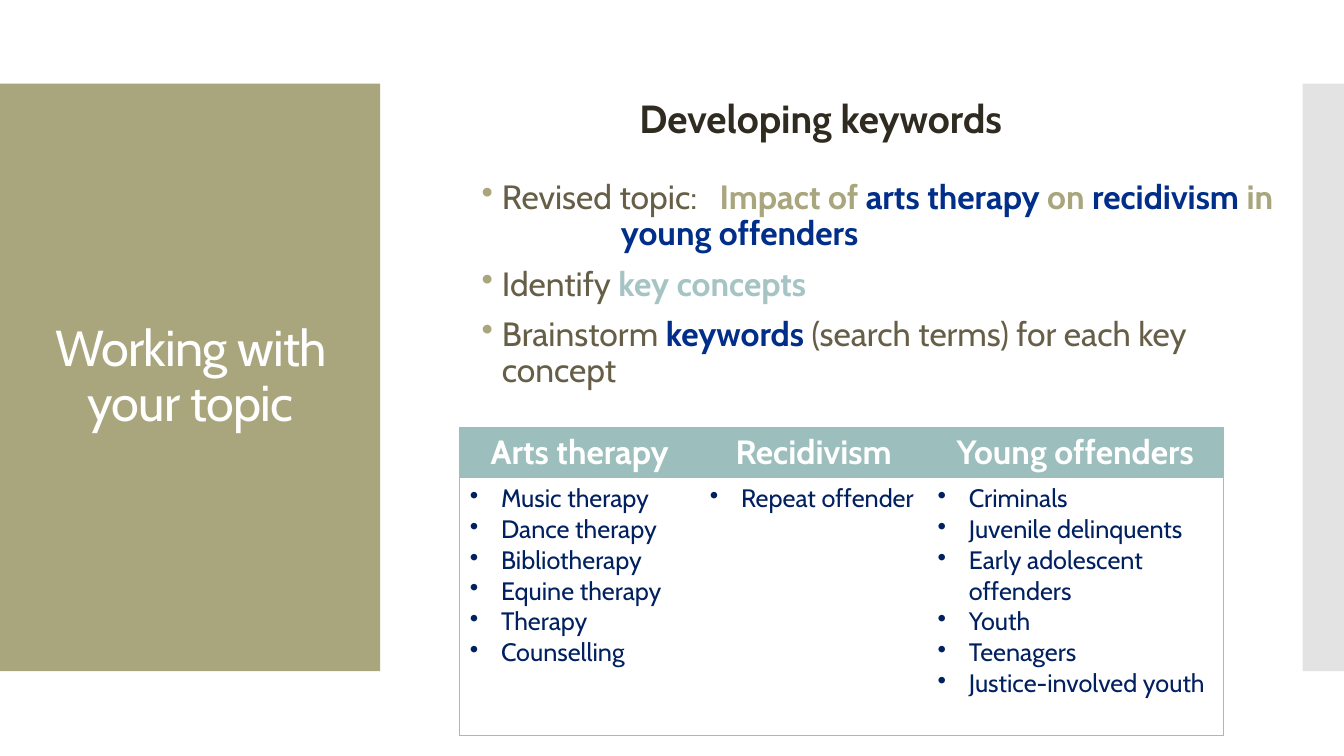
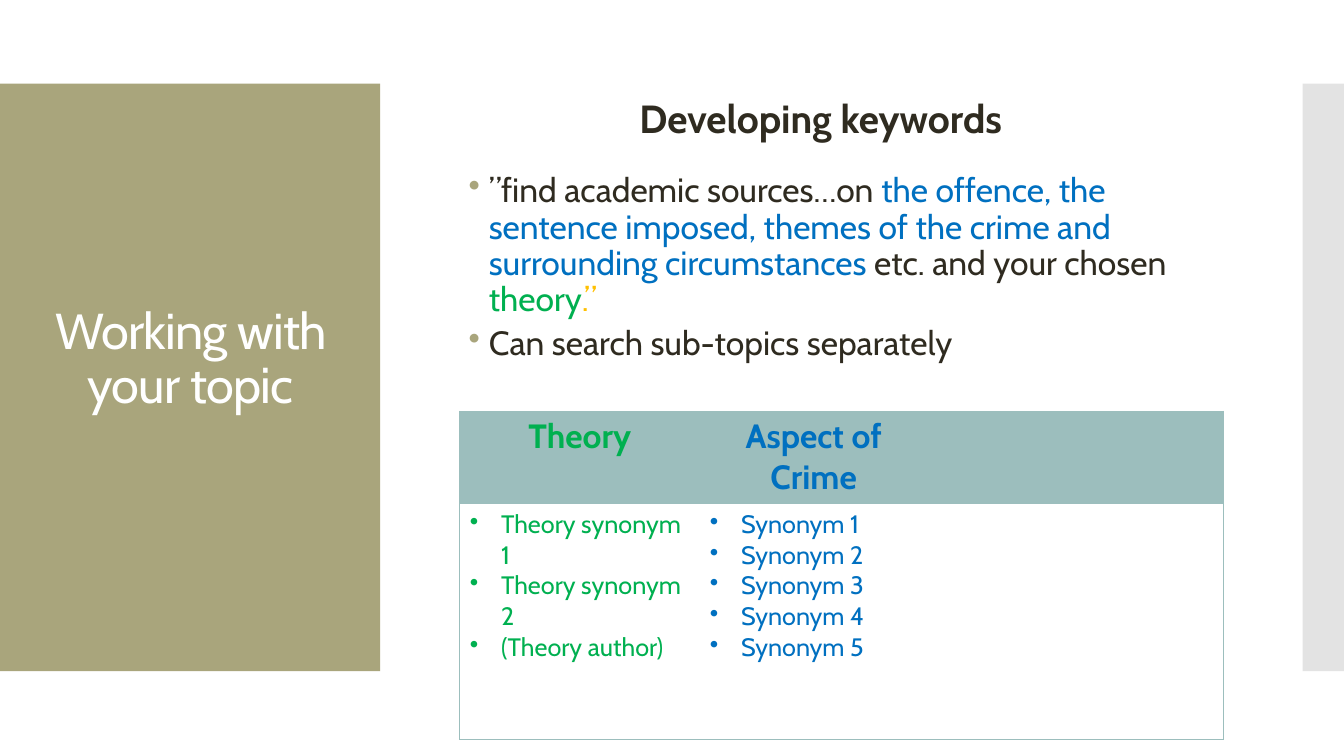
from dataclasses import dataclass

from pptx import Presentation
from pptx.dml.color import RGBColor
from pptx.enum.shapes import MSO_SHAPE
from pptx.enum.text import MSO_ANCHOR, MSO_AUTO_SIZE, PP_ALIGN
from pptx.oxml.ns import qn
from pptx.util import Inches, Pt
from lxml import etree

RECTANGLE = MSO_SHAPE.RECTANGLE
TOP, MIDDLE = MSO_ANCHOR.TOP, MSO_ANCHOR.MIDDLE
NO_FIT = MSO_AUTO_SIZE.NONE
CENTER = PP_ALIGN.CENTER


@dataclass(frozen=True)
class Theme:
    font: str = "Cabin"
    # Colours
    olive: str = "A9A57C"
    gray: str = "C8C8C8"
    white: str = "FFFFFF"
    ink: str = "2F2B20"
    brown: str = "675E47"
    royal: str = "002E89"
    navy: str = "002060"
    pale_teal: str = "A6C4C4"
    teal: str = "9CBEBD"
    blue: str = "0070C0"
    green: str = "00B050"
    amber: str = "FFC000"
    # Type sizes in points
    title_size: float = 36
    heading_size: float = 28
    body_size: float = 24
    cell_size: float = 18
    line_spacing: float = 0.9
    border_width: float = 0.75


THEME = Theme()
NO_GRID_STYLE = "{2D5ABB26-0587-4C30-8999-92F81FD0307C}"

# Boxes as left, top, width, height in inches
TITLE_BAND = (0, 0.83, 3.77, 5.83)
EDGE_BAND = (12.92, 0.83, 0.42, 5.83)
HEADING_BOX = (5.36, 0.94, 5.56, 0.59)
COLUMN_WIDTHS = (2.38, 2.26, 2.93)


def inches(box):
    return [Inches(length) for length in box]


def add_child(parent, tag, **attributes):
    child = etree.SubElement(parent, qn(tag))
    for name, value in attributes.items():
        child.set(name, str(value))
    return child


def add_run(paragraph, text, size, color, bold=False):
    run = paragraph.add_run()
    run.text = text
    run.font.name = THEME.font
    run.font.size = Pt(size)
    run.font.bold = bold
    run.font.color.rgb = RGBColor.from_string(color)
    return run


def set_bullet(paragraph, indent, color=None, tab_stops=()):
    properties = paragraph._p.get_or_add_pPr()
    properties.set("marL", str(Inches(indent)))
    properties.set("indent", str(-Inches(indent)))
    if color:
        add_child(add_child(properties, "a:buClr"), "a:srgbClr", val=color)
    add_child(properties, "a:buChar", char="•")
    if tab_stops:
        stops = add_child(properties, "a:tabLst")
        for position in tab_stops:
            add_child(stops, "a:tab", pos=Inches(position), algn="l")


def next_paragraph(frame, index):
    return frame.paragraphs[0] if index == 0 else frame.add_paragraph()


def prepare_frame(shape, anchor):
    frame = shape.text_frame
    frame.word_wrap = True
    frame.auto_size = NO_FIT
    frame.vertical_anchor = anchor
    return frame


# Bands and title
def add_band(slide, box, color, opacity=None):
    band = slide.shapes.add_shape(RECTANGLE, *inches(box))
    band.shadow.inherit = False
    band.fill.solid()
    band.fill.fore_color.rgb = RGBColor.from_string(color)
    band.line.fill.background()
    if opacity is not None:
        fill_color = band.element.spPr.find(qn("a:solidFill"))[0]
        add_child(fill_color, "a:alpha", val=opacity * 1000)
    # Bands lie behind the title
    slide.shapes.title.element.addprevious(band.element)


def add_title(slide, text, box):
    title = slide.shapes.title
    title.left, title.top, title.width, title.height = inches(box)
    paragraph = prepare_frame(title, MIDDLE).paragraphs[0]
    paragraph.alignment = CENTER
    paragraph.line_spacing = THEME.line_spacing
    run = add_run(paragraph, text, THEME.title_size, THEME.white)
    run.font._element.set("spc", "-60")


# Heading above the bullets
def add_heading(slide, text, box):
    heading = slide.shapes.add_textbox(*inches(box))
    paragraph = prepare_frame(heading, TOP).paragraphs[0]
    paragraph.alignment = CENTER
    paragraph.line_spacing = THEME.line_spacing
    add_run(paragraph, text, THEME.heading_size, THEME.ink, bold=True)


# Bulleted text; every item is a list of (text, colour, bold) runs
def add_bullets(slide, items, box, gap, tab_stops=()):
    body = slide.shapes.add_textbox(*inches(box))
    frame = prepare_frame(body, MIDDLE)
    for index, runs in enumerate(items):
        paragraph = next_paragraph(frame, index)
        set_bullet(paragraph, 0.2, THEME.olive, tab_stops if index == 0 else ())
        paragraph.line_spacing = THEME.line_spacing
        if index:
            paragraph.space_before = Pt(gap)
        for text, color, bold in runs:
            if text == "\n":
                paragraph.add_line_break()
            else:
                add_run(paragraph, text, THEME.body_size, color, bold)


# Keyword table
def set_borders(cell, sides):
    properties = cell._tc.get_or_add_tcPr()
    for side in sides:
        line = add_child(properties, f"a:ln{side}", w=Pt(THEME.border_width))
        add_child(add_child(line, "a:solidFill"), "a:srgbClr", val=THEME.teal)


def outer_sides(column, row, last_column, last_row):
    edges = (("L", column == 0), ("R", column == last_column),
             ("T", row == 0), ("B", row == last_row))
    return [side for side, is_outer in edges if is_outer]


def add_keyword_table(slide, columns, position, row_heights):
    """Each column is (heading, heading colour, keywords, keyword colour)."""
    box = (*position, sum(COLUMN_WIDTHS), sum(row_heights))
    table = slide.shapes.add_table(2, len(columns), *inches(box)).table
    table.first_row = table.horz_banding = False
    table._tbl.tblPr.find(qn("a:tableStyleId")).text = NO_GRID_STYLE
    for row, height in zip(table.rows, row_heights):
        row.height = Inches(height)

    for index, (heading, heading_color, keywords, keyword_color) in enumerate(columns):
        table.columns[index].width = Inches(COLUMN_WIDTHS[index])
        head, body = table.cell(0, index), table.cell(1, index)
        for row, cell in enumerate((head, body)):
            set_borders(cell, outer_sides(index, row, len(columns) - 1, 1))
        head.fill.solid()
        head.fill.fore_color.rgb = RGBColor.from_string(THEME.teal)
        body.fill.background()
        if heading:
            paragraph = head.text_frame.paragraphs[0]
            paragraph.alignment = CENTER
            add_run(paragraph, heading, THEME.body_size, heading_color, bold=True)
        for line, keyword in enumerate(keywords):
            paragraph = next_paragraph(body.text_frame, line)
            set_bullet(paragraph, 0.31)
            add_run(paragraph, keyword, THEME.cell_size, keyword_color)


# Shared frame of both slides
def add_topic_slide(presentation, title_top):
    slide = presentation.slides.add_slide(presentation.slide_layouts[5])
    add_band(slide, TITLE_BAND, THEME.olive)
    add_band(slide, EDGE_BAND, THEME.gray, opacity=50)
    add_title(slide, "Working with your topic", (0.28, title_top, 3.22, 5.03))
    add_heading(slide, "Developing keywords", HEADING_BOX)
    return slide


def build_key_concepts(presentation):
    slide = add_topic_slide(presentation, title_top=1.23)
    items = [
        [("Revised topic:\t", THEME.brown, False),
         ("Impact of ", THEME.olive, True),
         ("arts therapy ", THEME.royal, True),
         ("on ", THEME.olive, True),
         ("recidivism", THEME.royal, True),
         (" in", THEME.olive, True),
         ("\n", None, None),
         ("\tyoung offenders", THEME.royal, True)],
        [("Identify ", THEME.brown, False),
         ("key concepts", THEME.pale_teal, True)],
        [("Brainstorm ", THEME.brown, False),
         ("keywords ", THEME.royal, True),
         ("(search terms) for each key concept", THEME.brown, False)],
    ]
    add_bullets(slide, items, (4.68, 1.75, 8.13, 2.16), gap=10,
                tab_stops=(1.38, 2.36))
    columns = [
        ("Arts therapy", THEME.white,
         ["Music therapy", "Dance therapy", "Bibliotherapy", "Equine therapy",
          "Therapy", "Counselling"], THEME.navy),
        ("Recidivism", THEME.white, ["Repeat offender"], THEME.navy),
        ("Young offenders", THEME.white,
         ["Criminals", "Juvenile delinquents", "Early adolescent offenders",
          "Youth", "Teenagers", "Justice-involved youth"], THEME.navy),
    ]
    add_keyword_table(slide, columns, (4.56, 4.24), (0.5, 2.55))


def build_sub_topics(presentation):
    slide = add_topic_slide(presentation, title_top=1.06)
    items = [
        [("”find academic sources…on ", THEME.ink, False),
         ("the offence, the sentence imposed, themes of the crime and "
          "surrounding circumstances ", THEME.blue, False),
         ("etc. and your chosen ", THEME.ink, False),
         ("theory", THEME.green, False),
         (".”", THEME.amber, False)],
        [("Can search sub-topics separately", THEME.ink, False)],
    ]
    add_bullets(slide, items, (4.55, 1.58, 7.58, 2.16), gap=5)
    columns = [
        ("Theory", THEME.green,
         ["Theory synonym 1", "Theory synonym 2", "(Theory author)"], THEME.green),
        ("Aspect of Crime", THEME.blue,
         [f"Synonym {number}" for number in range(1, 6)], THEME.blue),
        ("", THEME.white, [], THEME.navy),
    ]
    add_keyword_table(slide, columns, (4.56, 4.08), (0.92, 2.34))


def main():
    presentation = Presentation()
    presentation.slide_width = Inches(13.33)
    presentation.slide_height = Inches(7.5)
    build_key_concepts(presentation)
    build_sub_topics(presentation)
    presentation.save("out.pptx")


if __name__ == "__main__":
    main()
